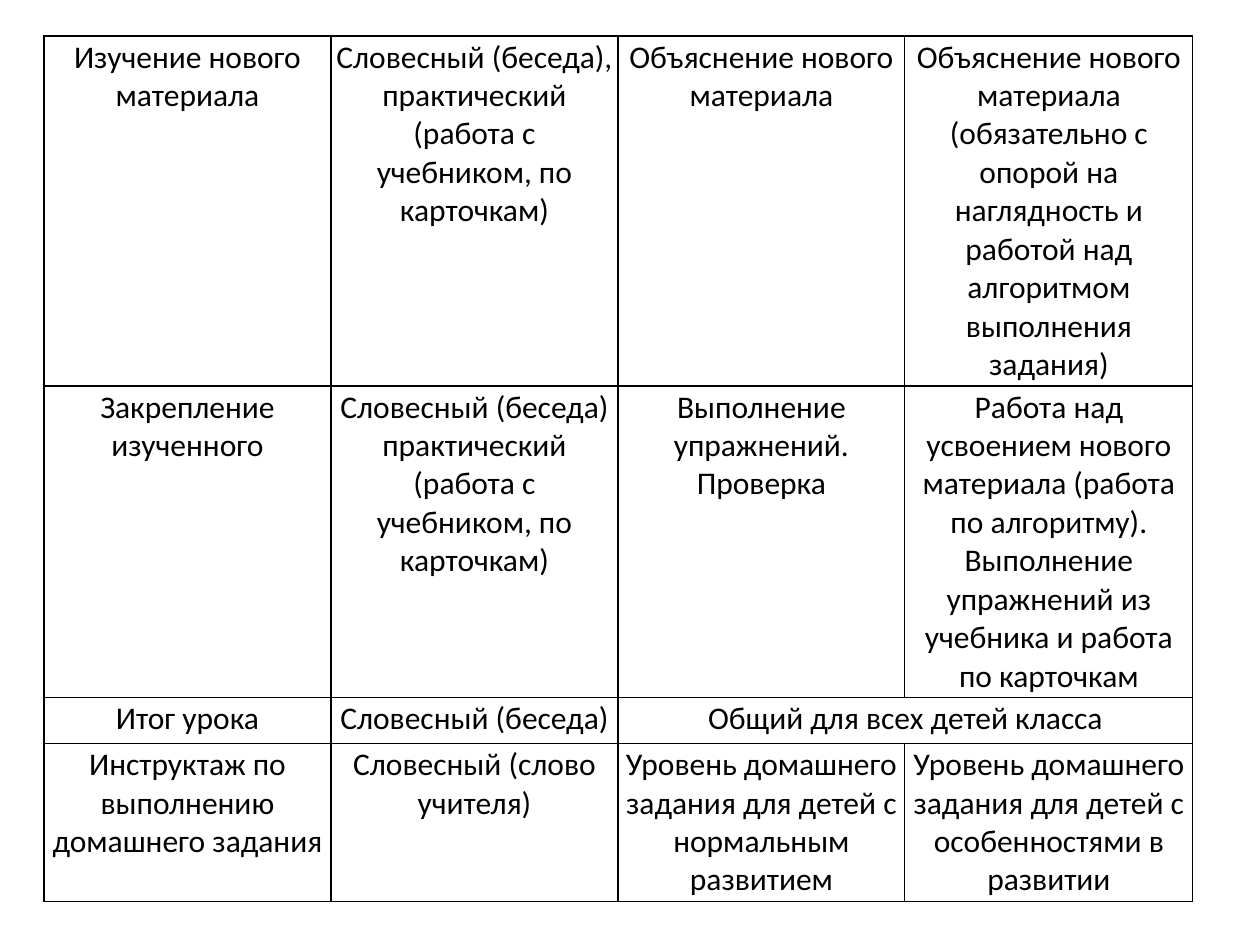
from dataclasses import dataclass

import pptx
import pptx.dml.color
import pptx.enum.text
import pptx.oxml
import pptx.oxml.ns
import pptx.util

EMU_PER_PX = 914400 / 126


@dataclass(frozen=True)
class Theme:
    font: str = "Calibri"
    size: int = 18
    ink: str = "000000"
    paper: str = "FFFFFF"
    border: float = 0.75


@dataclass(frozen=True)
class Stage:
    height: int
    name: str
    method: str
    typical_group: str
    special_group: str | None

    def texts(self) -> list[str | None]:
        return [self.name, self.method, self.typical_group, self.special_group]


THEME = Theme()
LEFT, TOP, TABLE_HEIGHT = 44, 36, 853
COLUMNS = (287, 287, 287, 288)
INSET = 2

STAGES = (
    Stage(
        213,
        "Изучение нового материала",
        "Словесный (беседа), практический (работа с учебником, по карточкам)",
        "Объяснение нового материала",
        "Объяснение нового материала (обязательно с опорой на наглядность "
        "и работой над алгоритмом выполнения задания)",
    ),
    Stage(
        234,
        "Закрепление изученного",
        "Словесный (беседа) практический (работа с учебником, по карточкам)",
        "Выполнение упражнений. Проверка",
        "Работа над усвоением нового материала (работа по алгоритму). "
        "Выполнение упражнений из учебника и работа по карточкам",
    ),
    Stage(46, "Итог урока", "Словесный (беседа)", "Общий для всех детей класса", None),
    Stage(
        130,
        "Инструктаж по выполнению домашнего задания",
        "Словесный (слово учителя)",
        "Уровень домашнего задания для детей с нормальным развитием",
        "Уровень домашнего задания для детей с особенностями в развитии",
    ),
)


def px(length: int) -> int:
    return round(length * EMU_PER_PX)


def rgb(color: str) -> pptx.dml.color.RGBColor:
    return pptx.dml.color.RGBColor.from_string(color)


def write(frame, text: str, *, size: int = THEME.size, font: str = THEME.font,
          color: str = THEME.ink, align=pptx.enum.text.PP_ALIGN.CENTER) -> None:
    paragraph = frame.paragraphs[0]
    paragraph.alignment = align
    run = paragraph.add_run()
    run.text = text
    run.font.size = pptx.util.Pt(size)
    run.font.name = font
    run.font.color.rgb = rgb(color)


def style_cell(cell) -> None:
    properties = cell._tc.get_or_add_tcPr()
    for side in ("lnL", "lnR", "lnT", "lnB"):
        properties.append(pptx.oxml.parse_xml(
            f'<a:{side} {pptx.oxml.ns.nsdecls("a")} w="{pptx.util.Pt(THEME.border)}">'
            f'<a:solidFill><a:srgbClr val="{THEME.ink}"/></a:solidFill></a:{side}>'
        ))
    cell.fill.solid()
    cell.fill.fore_color.rgb = rgb(THEME.paper)
    cell.margin_left = cell.margin_right = px(INSET)
    cell.margin_top = cell.margin_bottom = px(INSET)


def draw_stages(slide, stages: tuple[Stage, ...]) -> None:
    holder = slide.shapes.add_table(
        len(stages), len(COLUMNS), px(LEFT), px(TOP), px(sum(COLUMNS)), px(TABLE_HEIGHT)
    )
    plan = holder.table
    plan.first_row = plan.horz_banding = False
    for column, width in zip(plan.columns, COLUMNS):
        column.width = px(width)
    for index, stage in enumerate(stages):
        plan.rows[index].height = px(stage.height)
        for position, text in enumerate(stage.texts()):
            cell = plan.cell(index, position)
            style_cell(cell)
            if text is None:
                plan.cell(index, position - 1).merge(cell)
            else:
                write(cell.text_frame, text)
    holder.height = px(TABLE_HEIGHT)


def main() -> None:
    lesson = pptx.Presentation()
    lesson.slide_width, lesson.slide_height = px(1260), px(945)
    draw_stages(lesson.slides.add_slide(lesson.slide_layouts[6]), STAGES)
    lesson.save("out.pptx")


if __name__ == "__main__":
    main()
